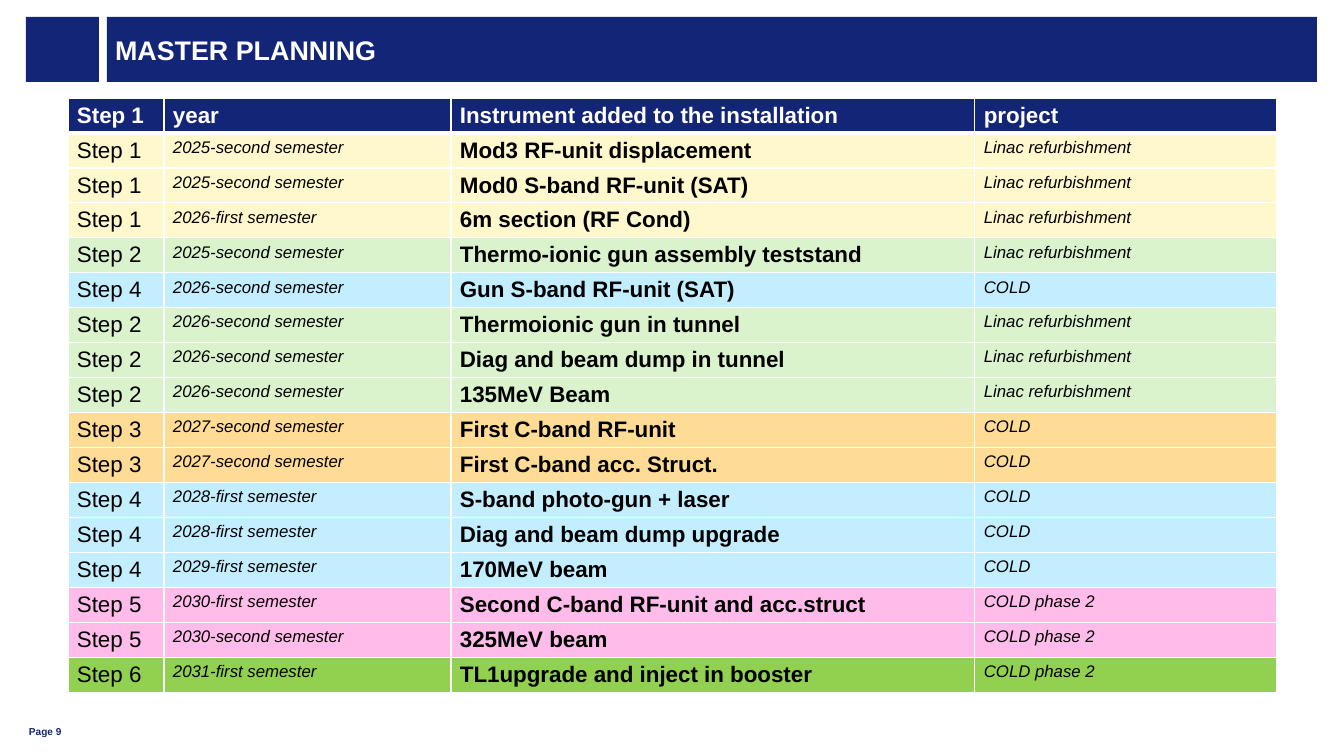
from dataclasses import dataclass

from lxml import etree
from pptx import Presentation
from pptx.dml.color import RGBColor
from pptx.enum.shapes import MSO_SHAPE
from pptx.enum.text import MSO_ANCHOR, MSO_AUTO_SIZE, PP_ALIGN
from pptx.oxml.ns import qn
from pptx.util import Pt

RECT = MSO_SHAPE.RECTANGLE
TOP, MIDDLE, BOTTOM = MSO_ANCHOR.TOP, MSO_ANCHOR.MIDDLE, MSO_ANCHOR.BOTTOM
LEFT = PP_ALIGN.LEFT
NO_FIT = MSO_AUTO_SIZE.NONE

SLIDE_W, SLIDE_H = 1344, 756
EMU_PER_PX = 12192000 / SLIDE_W


@dataclass(frozen=True)
class Theme:
    font: str = "Arial"
    navy: str = "132577"
    white: str = "FFFFFF"
    black: str = "000000"
    title_size: float = 19.2
    cell_size: float = 16
    detail_size: float = 12
    page_size: float = 7.2
    thin: float = 1
    thick: float = 3


STEP_FILLS = {
    "Step 1": "FFF8CC",
    "Step 2": "DAF3CD",
    "Step 3": "FFDC95",
    "Step 4": "C3EEFF",
    "Step 5": "FFBCEB",
    "Step 6": "92D050",
}
HEADER = ("Step 1", "year", "Instrument added to the installation", "project")
LINAC, COLD, COLD_2 = "Linac refurbishment", "COLD", "COLD phase 2"
PLANNING = [
    ("Step 1", "2025-second semester", "Mod3 RF-unit displacement", LINAC),
    ("Step 1", "2025-second semester", "Mod0 S-band RF-unit (SAT)", LINAC),
    ("Step 1", "2026-first semester", "6m section (RF Cond)", LINAC),
    ("Step 2", "2025-second semester", "Thermo-ionic gun assembly teststand", LINAC),
    ("Step 4", "2026-second semester", "Gun S-band RF-unit (SAT)", COLD),
    ("Step 2", "2026-second semester", "Thermoionic gun in tunnel", LINAC),
    ("Step 2", "2026-second semester", "Diag and beam dump in tunnel", LINAC),
    ("Step 2", "2026-second semester", "135MeV Beam", LINAC),
    ("Step 3", "2027-second semester", "First C-band RF-unit", COLD),
    ("Step 3", "2027-second semester", "First C-band acc. Struct.", COLD),
    ("Step 4", "2028-first semester", "S-band photo-gun + laser", COLD),
    ("Step 4", "2028-first semester", "Diag and beam dump upgrade", COLD),
    ("Step 4", "2029-first semester", "170MeV beam", COLD),
    ("Step 5", "2030-first semester", "Second C-band RF-unit and acc.struct", COLD_2),
    ("Step 5", "2030-second semester", "325MeV beam", COLD_2),
    ("Step 6", "2031-first semester", "TL1upgrade and inject in booster", COLD_2),
]


def px(n):
    return round(n * EMU_PER_PX)


class SlideBuilder:
    def __init__(self, s, theme):
        self.s = s
        self.theme = theme

    def paint(self, target, color):
        target.fill.solid()
        target.fill.fore_color.rgb = RGBColor.from_string(color)

    def add_run(self, tf, text, size, color, bold=False, italic=False):
        p = tf.paragraphs[0]
        p.alignment = LEFT
        r = p.add_run()
        r.text = text
        r.font.name = self.theme.font
        r.font.size = Pt(size)
        r.font.bold = bold
        r.font.italic = italic
        r.font.color.rgb = RGBColor.from_string(color)

    def set_frame(self, tf, anchor, side):
        tf.word_wrap = True
        tf.auto_size = NO_FIT
        tf.vertical_anchor = anchor
        tf.margin_left = tf.margin_right = px(side)
        tf.margin_top = tf.margin_bottom = 0

    def block(self, x, y, w, h):
        sp = self.s.shapes.add_shape(RECT, px(x), px(y), px(w), px(h))
        sp.shadow.inherit = False
        self.paint(sp, self.theme.navy)
        sp.line.fill.background()

    def title(self, x, y, w, h, text):
        sp = self.s.shapes.title
        sp.left, sp.top, sp.width, sp.height = px(x), px(y), px(w), px(h)
        self.paint(sp, self.theme.navy)
        self.set_frame(sp.text_frame, MIDDLE, 8)
        self.add_run(sp.text_frame, text, self.theme.title_size, self.theme.white, bold=True)

    def page_label(self, x, y, w, h, text):
        sp = self.s.shapes.add_textbox(px(x), px(y), px(w), px(h))
        self.set_frame(sp.text_frame, BOTTOM, 0)
        self.add_run(sp.text_frame, text, self.theme.page_size, self.theme.navy, bold=True)

    def borders(self, cell, top, bottom):
        # Border lines come before the fill in the cell properties
        tcPr = cell._tc.get_or_add_tcPr()
        widths = {"a:lnL": self.theme.thin, "a:lnR": self.theme.thin, "a:lnT": top, "a:lnB": bottom}
        for i, (tag, width) in enumerate(widths.items()):
            ln = etree.Element(qn(tag), w=str(Pt(width)))
            fill = etree.SubElement(ln, qn("a:solidFill"))
            etree.SubElement(fill, qn("a:srgbClr"), val=self.theme.white)
            tcPr.insert(i, ln)

    def table(self, x, y, col_widths, row_h, rows):
        t = self.theme
        frame = self.s.shapes.add_table(len(rows), len(col_widths), px(x), px(y),
                                        px(sum(col_widths)), px(row_h * len(rows)))
        table = frame.table
        table.horz_banding = False
        for col, width in zip(table.columns, col_widths):
            col.width = px(width)
        for i, values in enumerate(rows):
            table.rows[i].height = px(row_h)
            header = i == 0
            fill = t.navy if header else STEP_FILLS[values[0]]
            for j, text in enumerate(values):
                cell = table.cell(i, j)
                cell.margin_left = cell.margin_right = px(9)
                cell.margin_top, cell.margin_bottom = px(5), px(4)
                cell.vertical_anchor = TOP
                self.paint(cell, fill)
                self.borders(cell, t.thick if i == 1 else t.thin, t.thick if header else t.thin)
                detail = not header and j in (1, 3)
                self.add_run(cell.text_frame, text,
                             t.detail_size if detail else t.cell_size,
                             t.white if header else t.black,
                             bold=header or j == 2, italic=detail)


def main():
    prs = Presentation()
    prs.slide_width, prs.slide_height = px(SLIDE_W), px(SLIDE_H)
    s = prs.slides.add_slide(prs.slide_layouts[5])
    builder = SlideBuilder(s, Theme())

    # Title band
    builder.block(26, 17, 73, 65)
    builder.title(107, 17, 1210, 65, "MASTER PLANNING")

    # Page label
    builder.page_label(29, 715, 60, 23, "Page 9")

    # Planning table
    builder.table(68, 98, (96, 287, 524, 302), 35, [HEADER, *PLANNING])

    prs.save("out.pptx")


if __name__ == "__main__":
    main()
